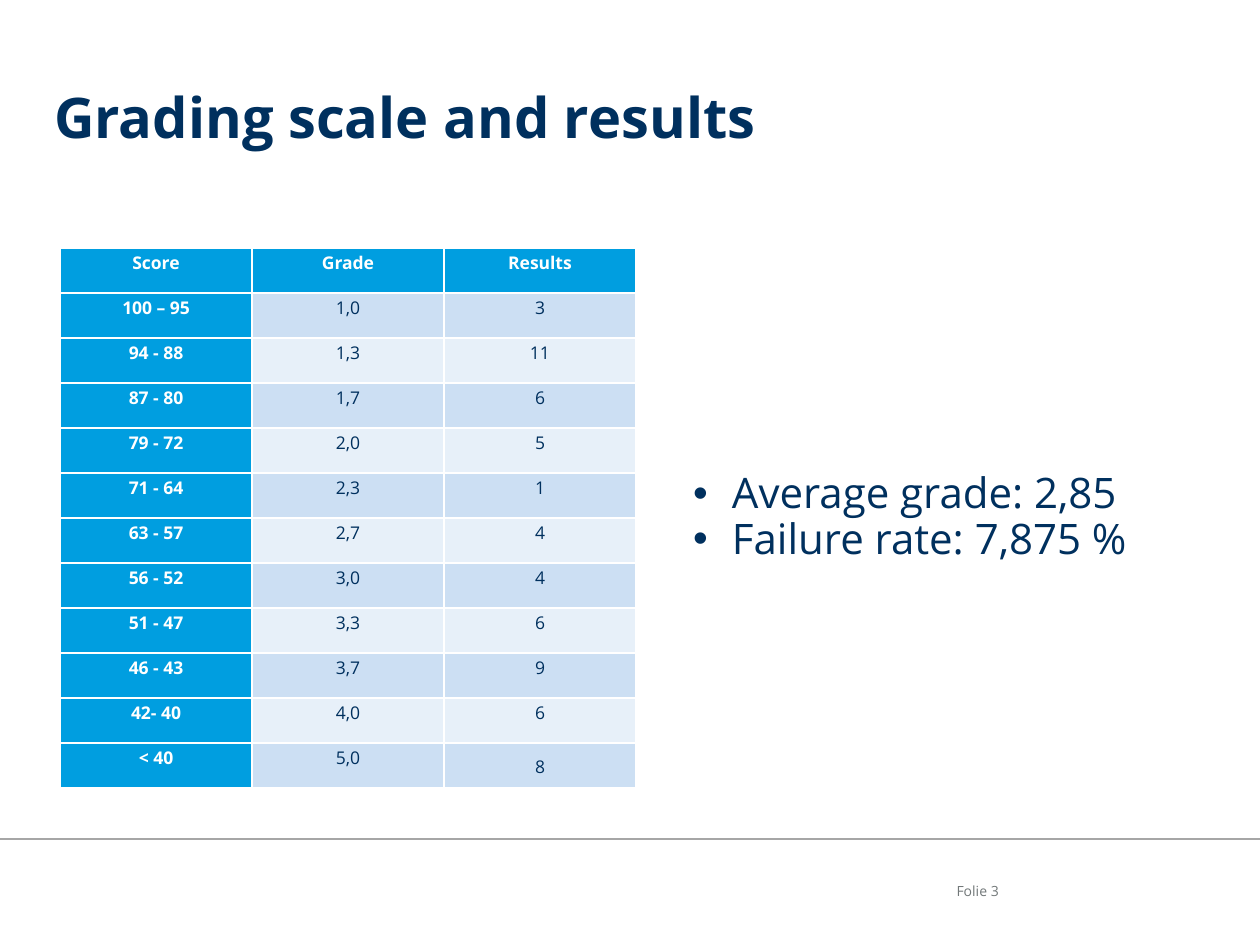
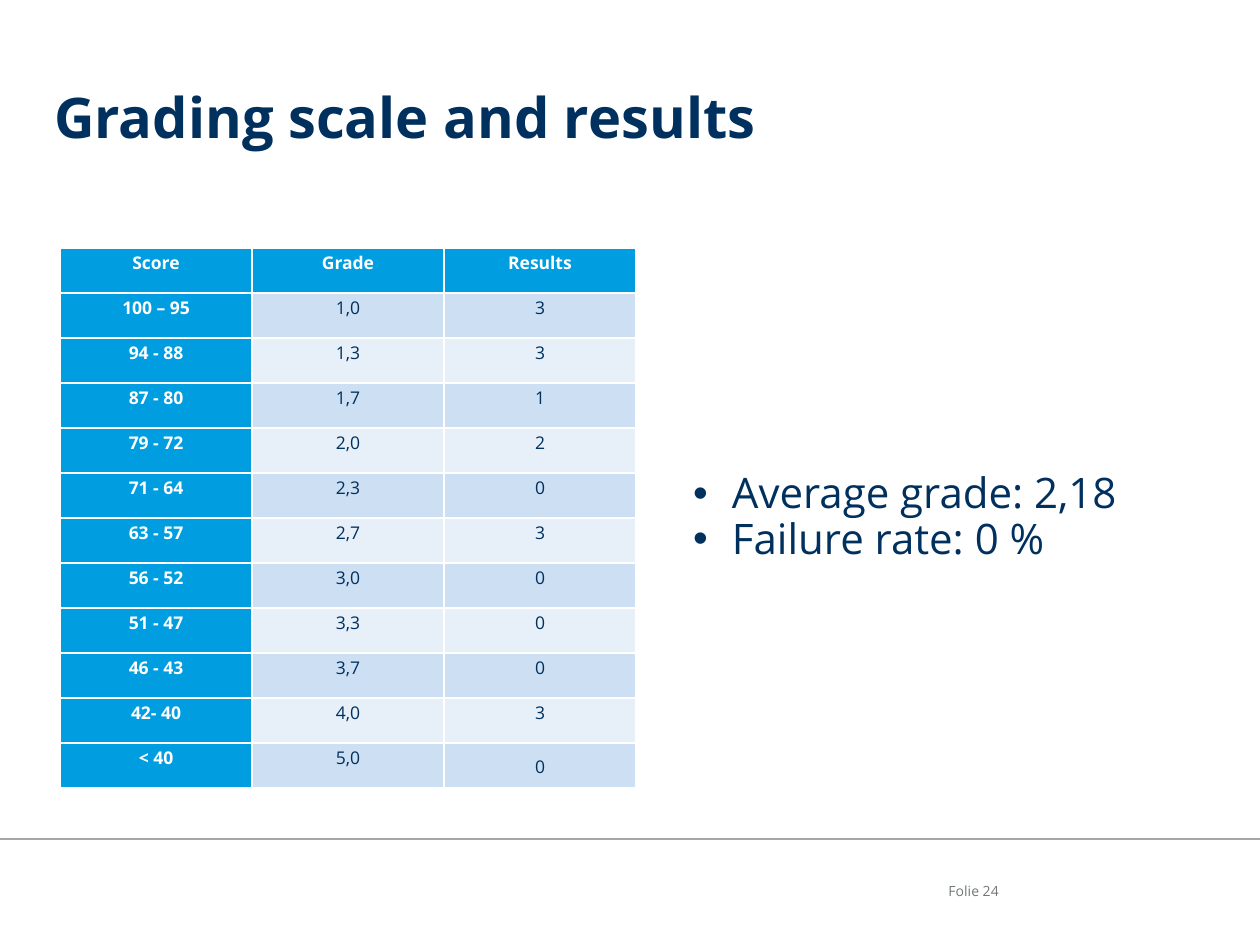
"""Build two slides that show a grading scale with its results."""
from dataclasses import dataclass

from lxml.etree import SubElement
from pptx import Presentation
from pptx.dml.color import RGBColor as Rgb
from pptx.enum.shapes import MSO_CONNECTOR as Conn
from pptx.enum.text import MSO_ANCHOR as Anchor, MSO_AUTO_SIZE as Auto, PP_ALIGN as Align
from pptx.oxml.ns import qn
from pptx.util import Emu, Pt

TITLE = "Grading scale and results"
HEAD = ("Score", "Grade", "Results")
SCALE = [
    ("100 – 95", "1,0"), ("94 - 88", "1,3"), ("87 - 80", "1,7"),
    ("79 - 72", "2,0"), ("71 - 64", "2,3"), ("63 - 57", "2,7"),
    ("56 - 52", "3,0"), ("51 - 47", "3,3"), ("46 - 43", "3,7"),
    ("42- 40", "4,0"), ("< 40", "5,0"),
]
EXAMS = [
    {"page": 3, "counts": (3, 11, 6, 5, 1, 4, 4, 6, 9, 6, 8),
     "facts": ("Average grade: 2,85", "Failure rate: 7,875 %")},
    {"page": 24, "counts": (3, 3, 1, 2, 0, 3, 0, 0, 0, 3, 0),
     "facts": ("Average grade: 2,18", "Failure rate: 0 %")},
]


@dataclass(frozen=True)
class Theme:
    """Colours, font and type sizes."""
    navy: str = "00305E"
    blue: str = "009EE0"
    bands: tuple = ("CCDFF3", "E7F0F9")
    white: str = "FFFFFF"
    rule: str = "A6A6A6"
    grey: str = "727879"
    face: str = "Open Sans"
    title: int = 32
    body: int = 24
    cell: int = 10
    foot: int = 8


LOOK = Theme()
WIDE, HIGH = 1260, 945
TITLE_BOX = (54, 82, 1153, 112)
FACT_BOX = (638, 248, 549, 540)
FOOT_BOX = (903, 864, 96, 50)
GRID_LEFT, GRID_TOP, COL, ROW = 60, 248, 192, 45
RULE_Y = 839


def px(num):
    """Turn pixels into EMU."""
    return Emu(round(num * 914400 / 126))


def style(para, size, color, bold=False, align=Align.LEFT):
    """Format a whole paragraph."""
    para.alignment = align
    font = para.font
    font.name, font.size, font.bold = LOOK.face, Pt(size), bold
    font.color.rgb = Rgb.from_string(color)


def pad(item, left=0, top=0, right=0, low=0):
    """Set the inner margins of a cell or text frame."""
    item.margin_left, item.margin_top = px(left), px(top)
    item.margin_right, item.margin_bottom = px(right), px(low)


def frame(shape, anchor=Anchor.TOP, top=0):
    """Prepare the text frame of a shape."""
    text = shape.text_frame
    text.word_wrap, text.auto_size = True, Auto.NONE
    text.vertical_anchor = anchor
    pad(text, top=top)
    return text


def add_base(slide, page):
    """Add the title, the rule and the page label."""
    title = slide.shapes.title
    title.left, title.top, title.width, title.height = map(px, TITLE_BOX)
    text = frame(title)
    text.text = TITLE
    style(text.paragraphs[0], LOOK.title, LOOK.navy, True)

    rule = slide.shapes.add_connector(Conn.STRAIGHT, 0, px(RULE_Y), px(WIDE), px(RULE_Y))
    rule.line.color.rgb = Rgb.from_string(LOOK.rule)
    rule.line.width = Pt(1)
    SubElement(rule._element.spPr, qn("a:effectLst"))

    text = frame(slide.shapes.add_textbox(*map(px, FOOT_BOX)), top=19)
    text.text = f"Folie {page}"
    style(text.paragraphs[0], LOOK.foot, LOOK.grey, align=Align.RIGHT)


def add_facts(slide, facts):
    """Add the bulleted key figures."""
    text = frame(slide.shapes.add_textbox(*map(px, FACT_BOX)), Anchor.MIDDLE)
    for num, fact in enumerate(facts):
        para = text.add_paragraph() if num else text.paragraphs[0]
        para.text = fact
        para.line_spacing = 0.9
        props = para._p.get_or_add_pPr()
        props.set("marL", str(px(94)))
        props.set("indent", str(px(-39)))
        SubElement(props, qn("a:buFont"), typeface="Arial")
        SubElement(props, qn("a:buChar"), char="•")
        style(para, LOOK.body, LOOK.navy)


def add_grid(slide, counts):
    """Add the table of scores, grades and results."""
    rows = [HEAD] + [(*pair, str(num)) for pair, num in zip(SCALE, counts)]
    high, wide = len(rows), len(HEAD)
    grid = slide.shapes.add_table(high, wide, px(GRID_LEFT), px(GRID_TOP),
                                  px(wide * COL), px(high * ROW)).table
    grid.first_col = True
    for r, row in enumerate(rows):
        for c, word in enumerate(row):
            cell = grid.cell(r, c)
            lead = r == 0 or c == 0
            cell.fill.solid()
            cell.fill.fore_color.rgb = Rgb.from_string(
                LOOK.blue if lead else LOOK.bands[(r - 1) % 2])
            cell.text = word
            pad(cell, 9, 1, 9)
            para = cell.text_frame.paragraphs[0]
            para.line_spacing, para.space_after = 1.07, Pt(8)
            style(para, LOOK.cell, LOOK.white if lead else LOOK.navy, lead, Align.CENTER)
    last = grid.cell(high - 1, wide - 1)
    last.vertical_anchor = Anchor.MIDDLE
    pad(last)


def main():
    """Build and save the deck."""
    deck = Presentation()
    deck.slide_width, deck.slide_height = px(WIDE), px(HIGH)
    for exam in EXAMS:
        slide = deck.slides.add_slide(deck.slide_layouts[5])
        add_base(slide, exam["page"])
        add_facts(slide, exam["facts"])
        add_grid(slide, exam["counts"])
    deck.save("out.pptx")


if __name__ == "__main__":
    main()
